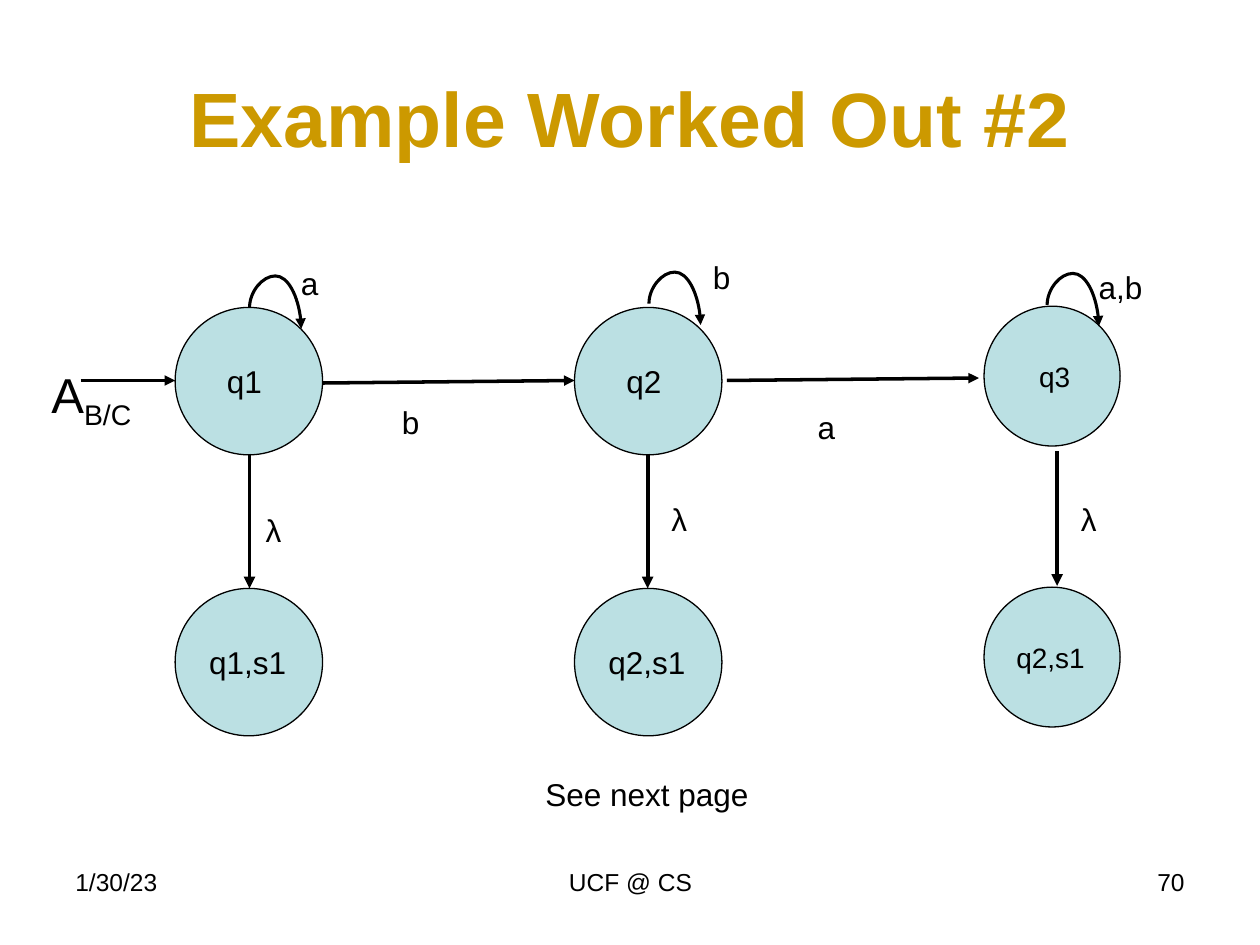
from lxml.etree import SubElement
from pptx import Presentation
from pptx.dml.color import RGBColor
from pptx.enum.shapes import MSO_CONNECTOR, MSO_SHAPE
from pptx.enum.text import MSO_ANCHOR, PP_ALIGN
from pptx.oxml.ns import qn
from pptx.util import Inches, Pt

BLACK = RGBColor(0x00, 0x00, 0x00)
GOLD = RGBColor(0xCC, 0x99, 0x00)
PALE_BLUE = RGBColor(0xBB, 0xE0, 0xE3)
FONT = "Arial"


def add_run(paragraph, text, size=18, color=BLACK, bold=False, baseline=None):
    run = paragraph.add_run()
    run.text = text
    run.font.name = FONT
    run.font.size = Pt(size)
    run.font.bold = bold
    run.font.color.rgb = color
    if baseline is not None:
        run.font._element.set("baseline", str(baseline * 1000))


def write(frame, text, align=PP_ALIGN.LEFT, **style):
    """Put text in the frame's first paragraph and return that paragraph."""
    frame.word_wrap = True
    paragraph = frame.paragraphs[0]
    paragraph.alignment = align
    add_run(paragraph, text, **style)
    return paragraph


class AutomatonSlide:
    def __init__(self, slide):
        self.slide = slide
        self.shapes = slide.shapes

    def title(self, text, left, top, width, height):
        title = self.shapes.title
        title.left, title.top = Inches(left), Inches(top)
        title.width, title.height = Inches(width), Inches(height)
        title.text_frame.vertical_anchor = MSO_ANCHOR.MIDDLE
        write(title.text_frame, text, PP_ALIGN.CENTER, size=44, color=GOLD, bold=True)

    def label(self, text, left, top, width=0.55, height=0.4, **style):
        box = self.shapes.add_textbox(Inches(left), Inches(top), Inches(width), Inches(height))
        return write(box.text_frame, text, **style)

    def state(self, name, left, top, width, height, size=18, indent=0):
        circle = self.shapes.add_shape(
            MSO_SHAPE.OVAL, Inches(left), Inches(top), Inches(width), Inches(height))
        circle.shadow.inherit = False
        circle.fill.solid()
        circle.fill.fore_color.rgb = PALE_BLUE
        circle.line.color.rgb = BLACK
        circle.line.width = Pt(0.75)
        frame = circle.text_frame
        frame.vertical_anchor = MSO_ANCHOR.MIDDLE
        frame.margin_left = Inches(0.1 + indent)
        frame.margin_right = 0
        write(frame, name, size=size)

    def arrow(self, start, end, weight=2, kind=MSO_CONNECTOR.STRAIGHT):
        points = [Inches(value) for value in (*start, *end)]
        connector = self.shapes.add_connector(kind, *points)
        connector.line.color.rgb = BLACK
        connector.line.width = Pt(weight)
        properties = connector._element.spPr
        SubElement(properties.find(qn("a:ln")), qn("a:tailEnd"), type="triangle")
        SubElement(properties, qn("a:effectLst"))
        return properties

    def loop(self, left, top, width=0.41, drop=0.17, rise=0.25):
        """Curve up from (left, top) and down to a point width right and drop below."""
        center_x, center_y = left + width / 2, top + drop / 2
        # The frame is upright and mirrored, then turned a quarter to the left.
        properties = self.arrow(
            (center_x + drop / 2, center_y - width / 2),
            (center_x - drop / 2, center_y + width / 2),
            1.75, MSO_CONNECTOR.CURVE)
        properties.find(qn("a:xfrm")).set("rot", str(270 * 60000))
        adjustments = properties.find(qn("a:prstGeom")).get_or_add_avLst()
        SubElement(adjustments, qn("a:gd"), name="adj1",
                   fmla=f"val {round(-rise / drop * 100000)}")


def main():
    presentation = Presentation()
    presentation.slide_width, presentation.slide_height = Inches(10), Inches(7.5)
    page = AutomatonSlide(presentation.slides.add_slide(presentation.slide_layouts[5]))
    page.title("Example Worked Out #2", 0.5, 0.3, 9, 1.25)

    footer = [("1/30/23", 0.5, 2.33, PP_ALIGN.LEFT),
              ("UCF @ CS", 3.42, 3.17, PP_ALIGN.CENTER),
              ("70", 7.17, 2.33, PP_ALIGN.RIGHT)]
    for text, left, width, align in footer:
        page.label(text, left, 6.83, width, 0.52, size=14, align=align)

    # upper state, lower state, left, top, width, height, text size, indent
    columns = [("q1", "q1,s1", 1.39, 2.44, 1.17, 1.17, 18, 0.14),
               ("q2", "q2,s1", 4.56, 2.44, 1.17, 1.17, 18, 0.14),
               ("q3", "q2,s1", 7.81, 2.43, 1.08, 1.11, 16, 0.18)]
    row_step = 2.23

    loops = [(1.98, 2.44), (5.15, 2.41), (8.31, 2.42)]
    drops = [(1.98, 3.6), (5.14, 3.6), (8.39, 3.58)]
    for column, loop, (drop_x, drop_top) in zip(columns, loops, drops):
        upper, lower, left, top, width, height, size, indent = column
        page.state(upper, left, top, width, height, size, indent)
        page.loop(*loop)
        page.state(lower, left, top + row_step, width, height, size)
        page.arrow((drop_x, drop_top), (drop_x, drop_top + 1.07), 2.25)

    transitions = [((0.64, 3.02), (1.39, 3.02)),
                   ((2.56, 3.04), (4.56, 3.02)),
                   ((5.77, 3.02), (7.77, 3))]
    for start, end in transitions:
        page.arrow(start, end)

    symbols = [("a", 2.29, 2.05), ("b", 5.56, 2), ("a,b", 8.62, 2.08),
               ("b", 3.09, 3.15), ("a", 6.39, 3.19),
               ("λ", 2.01, 4.01), ("λ", 5.23, 3.92), ("λ", 8.48, 3.92)]
    for symbol, left, top in symbols:
        page.label(symbol, left, top)

    automaton_name = page.label("A", 0.31, 2.84, 0.93, 0.57, size=28)
    add_run(automaton_name, "B/C", size=28, baseline=-25)
    page.label("See next page", 2.93, 6.1, 4.41, 0.42, align=PP_ALIGN.CENTER)

    presentation.save("out.pptx")


if __name__ == "__main__":
    main()
